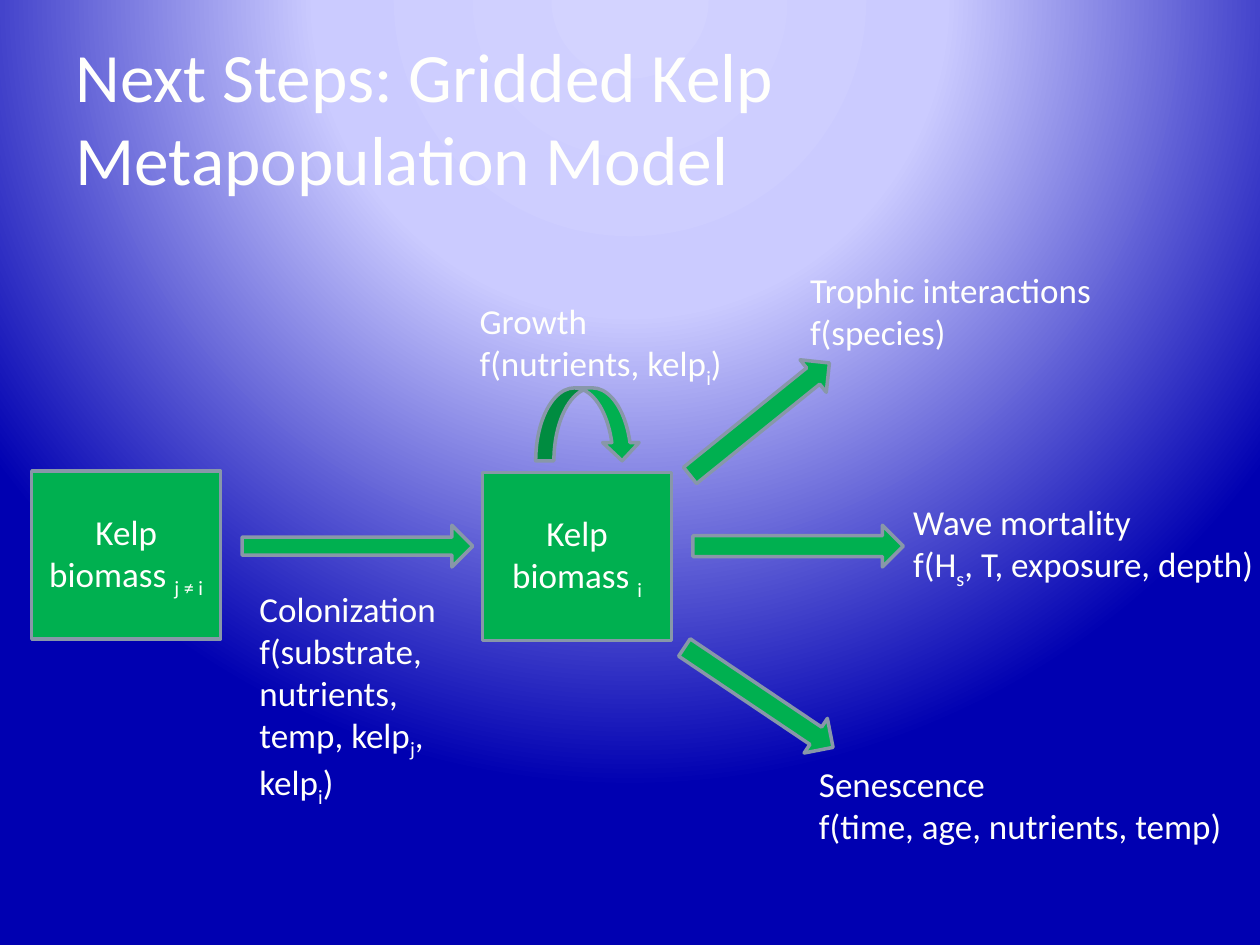
from dataclasses import dataclass

import lxml.etree
import pptx
import pptx.dml.color
import pptx.enum.shapes
import pptx.enum.text
import pptx.oxml.ns
import pptx.util

Cm = pptx.util.Cm
RGB = pptx.dml.color.RGBColor.from_string
SHAPE = pptx.enum.shapes.MSO_SHAPE
ALIGN = pptx.enum.text.PP_ALIGN
ANCHOR = pptx.enum.text.MSO_ANCHOR
qn = pptx.oxml.ns.qn


@dataclass(frozen=True)
class Theme:
    font: str = "Calibri"
    text: str = "FFFFFC"
    fill: str = "00B050"
    line: str = "8897A9"
    glow: tuple = ((0, "D3D3FF"), (40, "CBCBFF"), (100, "0000B1"))
    title_size: float = 39.6
    body_size: float = 20
    line_width: float = 2


THEME = Theme()


def format_run(r, size, subscript=False):
    r.font.name = THEME.font
    r.font.size = pptx.util.Pt(size)
    r.font.color.rgb = RGB(THEME.text)
    if subscript:
        r.font._element.set("baseline", "-25000")


def write_lines(tf, lines, align):
    """Each line alternates normal and subscript pieces, split at "|"."""
    for i, line in enumerate(lines):
        p = tf.add_paragraph() if i else tf.paragraphs[0]
        p.alignment = align
        for j, piece in enumerate(line.split("|")):
            if piece:
                r = p.add_run()
                r.text = piece
                format_run(r, THEME.body_size, subscript=j % 2 == 1)


def set_background(slide):
    """Radial glow centred above the slide."""
    slide.background.fill.gradient()
    grad = next(slide.element.iter(qn("a:gradFill")))
    for child in list(grad):
        grad.remove(child)
    stops = lxml.etree.SubElement(grad, qn("a:gsLst"))
    for pos, color in THEME.glow:
        gs = lxml.etree.SubElement(stops, qn("a:gs"), pos=str(pos * 1000))
        lxml.etree.SubElement(gs, qn("a:srgbClr"), val=color)
    circle = lxml.etree.SubElement(grad, qn("a:path"))
    circle.set("path", "circle")
    lxml.etree.SubElement(circle, qn("a:fillToRect"),
                          l="50000", t="-80000", r="50000", b="180000")


def add_title(slide, box, text):
    sp = slide.shapes.title
    sp.left, sp.top, sp.width, sp.height = (Cm(v) for v in box)
    tf = sp.text_frame
    tf.text = text
    tf.vertical_anchor = ANCHOR.MIDDLE
    p = tf.paragraphs[0]
    p.alignment = ALIGN.LEFT
    format_run(p.runs[0], THEME.title_size)


def add_green_shape(slide, kind, box, rotation=0):
    sp = slide.shapes.add_shape(kind, *(Cm(v) for v in box))
    sp.shadow.inherit = False
    sp.fill.solid()
    sp.fill.fore_color.rgb = RGB(THEME.fill)
    sp.line.color.rgb = RGB(THEME.line)
    sp.line.width = pptx.util.Pt(THEME.line_width)
    sp.rotation = rotation
    return sp


def add_patch(slide, box, text):
    tf = add_green_shape(slide, SHAPE.RECTANGLE, box).text_frame
    tf.word_wrap = True
    tf.vertical_anchor = ANCHOR.MIDDLE
    write_lines(tf, [text], ALIGN.CENTER)


def add_label(slide, box, lines, wrap=False):
    tf = slide.shapes.add_textbox(*(Cm(v) for v in box)).text_frame
    tf.word_wrap = wrap
    tf.auto_size = pptx.enum.text.MSO_AUTO_SIZE.SHAPE_TO_FIT_TEXT
    write_lines(tf, lines, ALIGN.LEFT)


def add_model(slide, left, top):
    """Two kelp patches, the flows between them and what drives each flow."""
    def at(x, y, w, h):
        return left + x, top + y, w, h

    patch_w, patch_h, arrow_h, label_h = 3.81, 3.38, 0.84, 1.96

    # Patches
    add_patch(slide, at(9.09, 4.25, patch_w, patch_h), "Kelp biomass |i")
    add_patch(slide, at(0, 4.22, patch_w, patch_h), "Kelp biomass |j ≠ i")

    # Growth loop, then loss arrows: trophic, wave, senescence
    add_green_shape(slide, SHAPE.CURVED_DOWN_ARROW, at(10.16, 2.54, 2.11, 1.47))
    for x, y, w, rotation in ((12.87, 2.75, 3.61, 321.1),
                              (13.33, 5.31, 4.24, 0),
                              (12.85, 8.36, 3.61, 33.9)):
        add_green_shape(slide, SHAPE.RIGHT_ARROW, at(x, y, w, arrow_h), rotation)

    # Colonization arrow
    sp = add_green_shape(slide, SHAPE.RIGHT_ARROW, at(4.24, 5.31, 4.65, arrow_h))
    sp.adjustments[0] = 0.43

    # Labels
    for x, y, w, lines in (
        (15.44, 0, 6.25, ("Trophic interactions", "f(species)")),
        (17.52, 4.68, 7.47, ("Wave mortality", "f(H|s|, T, exposure, depth)")),
        (15.62, 9.96, 8.71, ("Senescence", "f(time, age, nutrients, temp)")),
        (8.78, 0.64, 5.61, ("Growth", "f(nutrients, kelp|i|)")),
    ):
        add_label(slide, at(x, y, w, label_h), lines)
    add_label(slide, at(4.34, 6.43, 4.88, 4.52),
              ("Colonization", "f(substrate, nutrients, temp, kelp|j|, kelp|i|)"),
              wrap=True)


def main():
    prs = pptx.Presentation()
    prs.slide_width, prs.slide_height = Cm(25.4), Cm(19.05)
    slide = prs.slides.add_slide(prs.slide_layouts[5])
    set_background(slide)
    add_title(slide, (1.27, 0.76, 22.86, 3.18),
              "Next Steps: Gridded Kelp Metapopulation Model")
    add_model(slide, left=0.64, top=5.28)
    prs.save("out.pptx")


if __name__ == "__main__":
    main()
